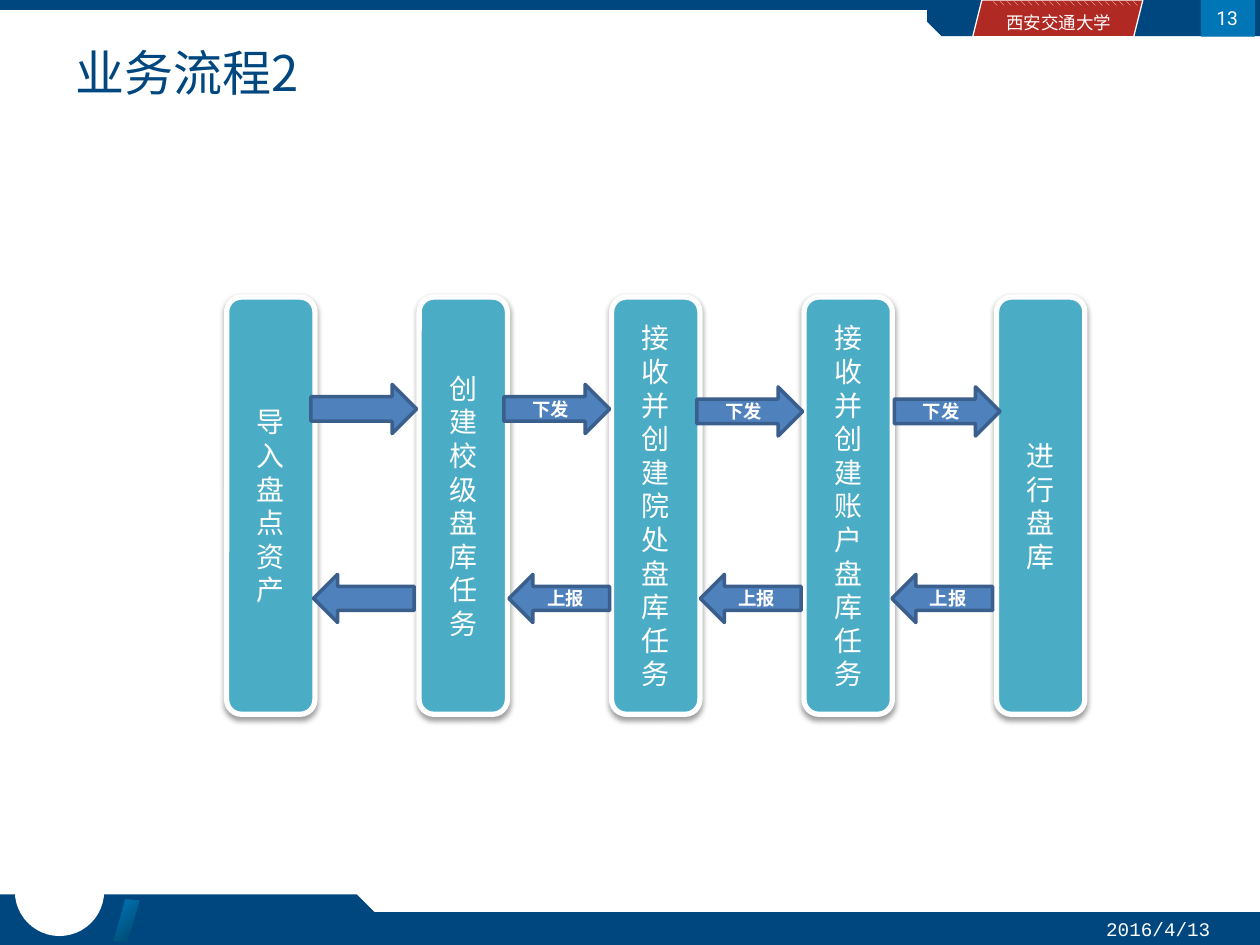
from dataclasses import dataclass

from lxml import etree
from pptx import Presentation
from pptx.dml.color import RGBColor
from pptx.enum.dml import MSO_PATTERN
from pptx.enum.lang import MSO_LANGUAGE_ID
from pptx.enum.shapes import MSO_SHAPE
from pptx.enum.text import MSO_ANCHOR, MSO_AUTO_SIZE, PP_ALIGN
from pptx.oxml.ns import qn
from pptx.shapes.autoshape import Shape
from pptx.slide import Slide
from pptx.util import Cm, Pt

RECTANGLE = MSO_SHAPE.RECTANGLE
PARALLELOGRAM = MSO_SHAPE.PARALLELOGRAM
ROUNDED = MSO_SHAPE.ROUNDED_RECTANGLE
RIGHT_ARROW = MSO_SHAPE.RIGHT_ARROW
LEFT_ARROW = MSO_SHAPE.LEFT_ARROW
LEFT, CENTER = PP_ALIGN.LEFT, PP_ALIGN.CENTER
MIDDLE = MSO_ANCHOR.MIDDLE
CHINESE = MSO_LANGUAGE_ID.SIMPLIFIED_CHINESE


@dataclass(frozen=True)
class TextStyle:
    font: str
    size: float
    color: str = "FFFFFF"
    bold: bool = False
    align: PP_ALIGN = CENTER


@dataclass(frozen=True)
class Theme:
    navy: str = "00477F"
    blue: str = "0076B7"
    deep_blue: str = "00466C"
    red: str = "B02923"
    white: str = "FFFFFF"
    step: str = "4BACC6"
    arrow: str = "4F81BD"
    arrow_edge: str = "3A5F8C"
    shadow: str = "000000"
    title: TextStyle = TextStyle("Noto Sans CJK SC", 28, "00477F", align=LEFT)
    school: TextStyle = TextStyle("Roboto", 10)
    number: TextStyle = TextStyle("Roboto", 11)
    date: TextStyle = TextStyle("Courier New", 11, align=LEFT)
    step_text: TextStyle = TextStyle("Calibri", 16)
    arrow_text: TextStyle = TextStyle("Calibri", 10.5, bold=True)


@dataclass(frozen=True)
class Area:
    """A rectangle on the page, in centimetres."""
    left: float
    top: float
    width: float
    height: float

    def lengths(self) -> tuple[Cm, Cm, Cm, Cm]:
        return Cm(self.left), Cm(self.top), Cm(self.width), Cm(self.height)


@dataclass(frozen=True)
class Arrow:
    kind: MSO_SHAPE
    area: Area
    label: str


THEME = Theme()
PAGE_WIDTH, PAGE_HEIGHT = 25.4, 19.05
STEP_LEFT, STEP_TOP, STEP_PITCH = 4.57, 5.99, 3.88
STEP_WIDTH, STEP_HEIGHT = 1.78, 8.41
STEPS = ["导入盘点资产", "创建校级盘库任务", "接收并创建院处盘库任务",
         "接收并创建账户盘库任务", "进行盘库"]
SEND_PLACES = [(6.27, 7.75), (10.16, 7.75), (14.05, 7.8), (18.03, 7.8)]
REPORT_LEFTS = [6.32, 10.26, 14.12, 17.98]
ARROWS = [
    Arrow(RIGHT_ARROW, Area(left, top, 2.13, 0.99), "下发" if index else "")
    for index, (left, top) in enumerate(SEND_PLACES)
] + [
    Arrow(LEFT_ARROW, Area(left, 11.58, 2.03, 0.97), "上报" if index else "")
    for index, left in enumerate(REPORT_LEFTS)
]


def rgb(color: str) -> RGBColor:
    return RGBColor.from_string(color)


def write(shape: Shape, text: str, style: TextStyle) -> None:
    frame = shape.text_frame
    frame.word_wrap = True
    frame.auto_size = MSO_AUTO_SIZE.NONE
    frame.vertical_anchor = MIDDLE
    para = frame.paragraphs[0]
    para.alignment = style.align
    span = para.add_run()
    span.text = text
    span.font.name = style.font
    span.font.size = Pt(style.size)
    span.font.bold = style.bold
    span.font.color.rgb = rgb(style.color)
    span.font.language_id = CHINESE


def add_label(page: Slide, area: Area, text: str, style: TextStyle) -> None:
    write(page.shapes.add_textbox(*area.lengths()), text, style)


def add_block(page: Slide, kind: MSO_SHAPE, area: Area, fill: str,
              edge: str = "", edge_width: float = 0) -> Shape:
    """Add a flat filled shape, outlined only when an edge colour is given."""
    block = page.shapes.add_shape(kind, *area.lengths())
    block.shadow.inherit = False
    block.fill.solid()
    block.fill.fore_color.rgb = rgb(fill)
    if edge:
        block.line.color.rgb = rgb(edge)
        block.line.width = Pt(edge_width)
    else:
        block.line.fill.background()
    return block


def add_soft_shadow(shape: Shape) -> None:
    effects = shape.element.spPr.find(qn("a:effectLst"))
    shadow = etree.SubElement(effects, qn("a:outerShdw"), blurRad=str(Pt(3.1)),
                              dist=str(Pt(1.6)), dir="5400000", rotWithShape="0")
    color = etree.SubElement(shadow, qn("a:srgbClr"), val=THEME.shadow)
    etree.SubElement(color, qn("a:alpha"), val="38000")


def draw_header(page: Slide) -> None:
    tab = add_block(page, MSO_SHAPE.SNIP_1_RECTANGLE, Area(18.69, 0.15, 6.71, 0.58), THEME.navy)
    tab.adjustments[0] = 0.5
    tab.rotation = 180
    add_block(page, RECTANGLE, Area(0, 0, PAGE_WIDTH, 0.2), THEME.navy)
    add_block(page, PARALLELOGRAM, Area(19.61, 0, 3.43, 0.74), THEME.red, THEME.white, 0.75)
    add_label(page, Area(19.56, 0.1, 3.56, 0.69), "西安交通大学", THEME.school)
    hatch = add_block(page, PARALLELOGRAM, Area(19.96, 0.03, 3.02, 0.08), THEME.red)
    hatch.fill.patterned()
    hatch.fill.pattern = MSO_PATTERN.WIDE_DOWNWARD_DIAGONAL
    hatch.fill.fore_color.rgb = rgb(THEME.white)
    hatch.fill.back_color.rgb = rgb(THEME.red)
    add_block(page, RECTANGLE, Area(24.21, 0, 1.09, 0.74), THEME.blue)
    add_label(page, Area(24.18, 0, 1.12, 0.74), "13", THEME.number)


def draw_footer(page: Slide) -> None:
    add_block(page, RECTANGLE, Area(0, 18.39, PAGE_WIDTH, 0.66), THEME.navy)
    tab = add_block(page, MSO_SHAPE.SNIP_2_DIAG_RECTANGLE, Area(0, 18.03, 7.7, 1.02), THEME.navy)
    tab.adjustments[0] = 0
    tab.adjustments[1] = 0.5
    add_block(page, MSO_SHAPE.OVAL, Area(0.3, 17.07, 1.8, 1.8), THEME.white)
    slash = add_block(page, PARALLELOGRAM, Area(2.31, 18.14, 0.48, 0.84), THEME.blue)
    slash.adjustments[0] = 0.42
    slash.rotation = 2.5
    slash.fill.gradient()
    slash.fill.gradient_angle = 135
    for stop, color in zip(slash.fill.gradient_stops, (THEME.deep_blue, THEME.blue)):
        stop.color.rgb = rgb(color)
    add_label(page, Area(22.05, 18.42, 3.05, 0.61), "2016/4/13", THEME.date)


def draw_flow(page: Slide) -> None:
    for index, text in enumerate(STEPS):
        area = Area(STEP_LEFT + index * STEP_PITCH, STEP_TOP, STEP_WIDTH, STEP_HEIGHT)
        box = add_block(page, ROUNDED, area, THEME.step, THEME.white, 3)
        add_soft_shadow(box)
        write(box, text, THEME.step_text)
    for arrow in ARROWS:
        shape = add_block(page, arrow.kind, arrow.area, THEME.arrow, THEME.arrow_edge, 2)
        if arrow.label:
            write(shape, arrow.label, THEME.arrow_text)


def main() -> None:
    deck = Presentation()
    deck.slide_width, deck.slide_height = Cm(PAGE_WIDTH), Cm(PAGE_HEIGHT)
    page = deck.slides.add_slide(deck.slide_layouts.get_by_name("Title Only"))
    title = page.shapes.title
    title.left, title.top, title.width, title.height = Area(1.27, 0.76, 23.24, 1.37).lengths()
    write(title, "业务流程2", THEME.title)
    draw_header(page)
    draw_footer(page)
    draw_flow(page)
    deck.save("out.pptx")


if __name__ == "__main__":
    main()
